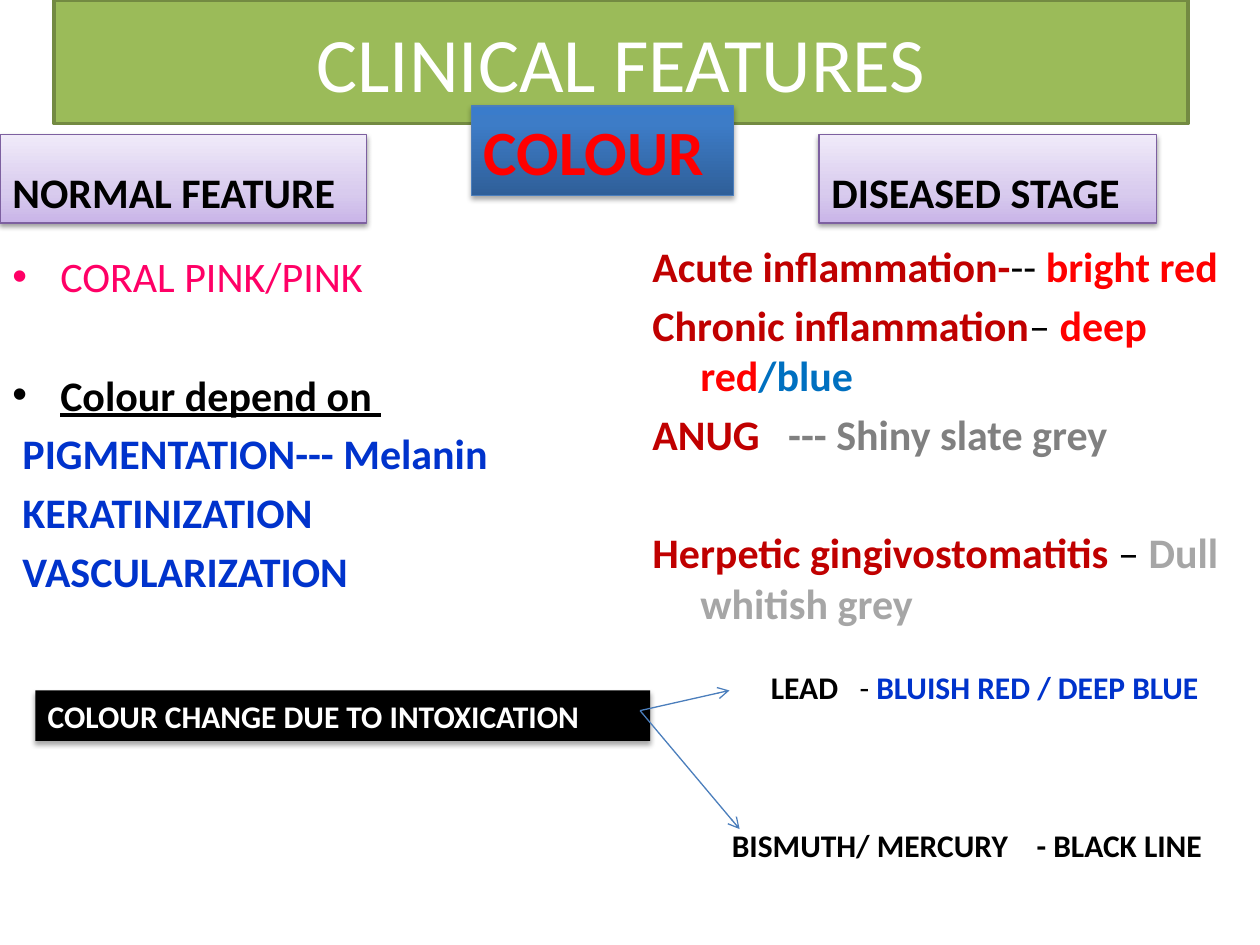
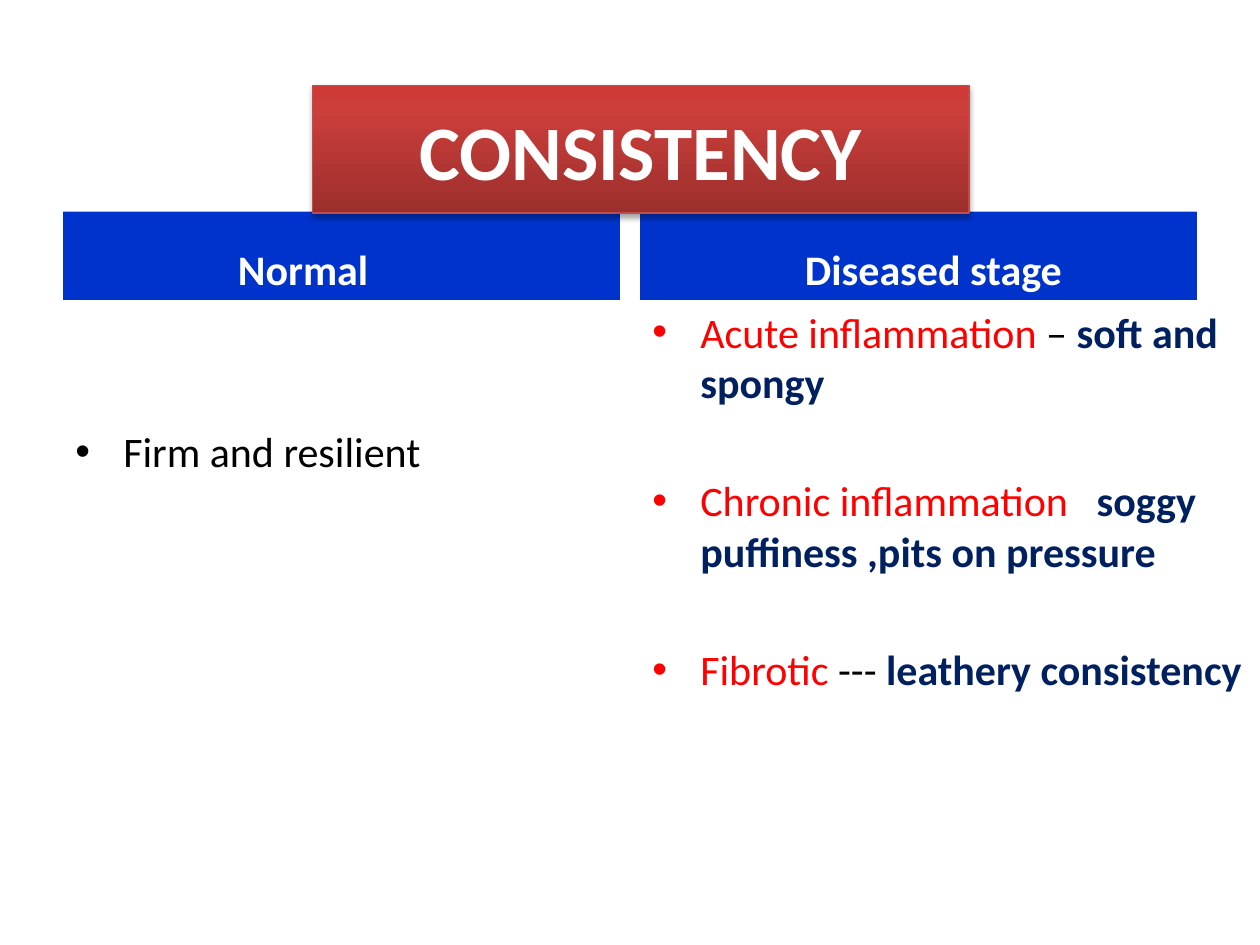
from pptx import Presentation
from pptx.dml.color import RGBColor as Rgb
from pptx.enum.shapes import MSO_CONNECTOR as Link, MSO_SHAPE as Shape
from pptx.enum.text import MSO_ANCHOR as Anchor, PP_ALIGN as Align
from pptx.oxml.ns import qn
from pptx.util import Inches, Pt
from lxml.etree import SubElement

COLOURS = {
    "black": "000000", "white": "FFFFFF", "red": "FF0000", "crimson": "C00000",
    "pink": "FF0066", "royal": "0033CC", "blue": "0070C0", "navy": "002060",
    "slate": "808080", "dull": "A6A6A6", "green": "9BBB59", "olive": "738A42",
    "purple": "7D60A0", "steel": "4B7EBC", "brick": "BF4C48",
}
GRADIENTS = {
    "lilac": [(0, "C9B5E8"), (35, "D8CBEE"), (100, "F0EAF9")],
    "azure": [(0, "2F5F99"), (80, "3D7CC7"), (100, "3A7CCB")],
    "ruby": [(0, "9C2F2D"), (80, "CB3E3A"), (100, "CE3B37")],
}
FONT = "Calibri"
BODY_SIZE = 24
SPACE_WIDTH = 0.226
SPACING = 0.2 * BODY_SIZE
EMPTY_LINE = 1.22 * BODY_SIZE + SPACING
HANG = 0.38
SOFT_SHADOW = {"alpha": 38, "blur": 3.1, "distance": 1.6}
DEEP_SHADOW = {"alpha": 35, "blur": 3.1, "distance": 1.8}


def rgb(name):
    return Rgb.from_string(COLOURS[name])


def run(text, colour="black", bold=True, underline=False):
    return {"text": text, "colour": colour, "bold": bold, "underline": underline}


def wide_space(count):
    return {**run(" "), "spaces": count}


def line(*runs, bullet=False, left=HANG, hang=HANG, after_gap=False):
    return {"runs": runs, "bullet": bullet, "left": left, "hang": hang,
            "after_gap": after_gap}


def plain(*runs, left=0):
    return line(*runs, left=left, hang=0)


def add_run(para, item, size):
    span = para.add_run()
    span.text = item["text"]
    formats = {"name": FONT, "size": Pt(size), "bold": item["bold"],
               "underline": item["underline"]}
    for name, value in formats.items():
        setattr(span.font, name, value)
    span.font.color.rgb = rgb(item["colour"])
    if "spaces" in item:
        extra = (item["spaces"] - 1) * SPACE_WIDTH * size
        span.font._element.set("spc", str(round(extra * 100)))


def write(box, lines, size=BODY_SIZE, anchor=Anchor.TOP, align=Align.LEFT, top=0.05):
    frame = box.text_frame
    formats = {"word_wrap": True, "vertical_anchor": anchor, "margin_top": Inches(top)}
    for name, value in formats.items():
        setattr(frame, name, value)
    for index, item in enumerate(lines):
        para = frame.add_paragraph() if index else frame.paragraphs[0]
        para.alignment = align
        if index:
            para.space_before = Pt(SPACING + EMPTY_LINE * item["after_gap"])
        settings = para._p.get_or_add_pPr()
        settings.set("marL", str(Inches(item["left"])))
        settings.set("indent", str(-Inches(item["hang"])))
        if item["bullet"]:
            SubElement(settings, qn("a:buFont")).set("typeface", "Arial")
            SubElement(settings, qn("a:buChar")).set("char", "•")
        else:
            SubElement(settings, qn("a:buNone"))
        for span in item["runs"]:
            add_run(para, span, size)


def add_text(page, box, lines, **formats):
    write(page.shapes.add_textbox(*map(Inches, box)), lines, **formats)


def fill_gradient(shape, stops):
    shape.fill.gradient()
    shape.fill.gradient_angle = 90
    stop_list = shape._element.spPr.find(qn("a:gradFill")).find(qn("a:gsLst"))
    for old in list(stop_list):
        stop_list.remove(old)
    for position, colour in stops:
        stop = SubElement(stop_list, qn("a:gs"), pos=str(position * 1000))
        SubElement(stop, qn("a:srgbClr"), val=colour)


def add_shadow(shape, alpha, blur, distance):
    effects = shape._element.spPr.find(qn("a:effectLst"))
    outer = SubElement(effects, qn("a:outerShdw"), blurRad=str(Pt(blur)),
                       dist=str(Pt(distance)), dir="5400000", rotWithShape="0")
    colour = SubElement(outer, qn("a:srgbClr"), val=COLOURS["black"])
    SubElement(colour, qn("a:alpha"), val=str(alpha * 1000))


def add_band(page, box, lines, fill, border=None, width=0.75, shadow=None, **formats):
    band = page.shapes.add_shape(Shape.RECTANGLE, *map(Inches, box))
    band.shadow.inherit = False
    if fill in GRADIENTS:
        fill_gradient(band, GRADIENTS[fill])
    else:
        band.fill.solid()
        band.fill.fore_color.rgb = rgb(fill)
    if border:
        band.line.color.rgb = rgb(border)
        band.line.width = Pt(width)
    else:
        band.line.fill.background()
    if shadow:
        add_shadow(band, **shadow)
    write(band, lines, **formats)


def add_title(page, box, text, fill, border, bold=False, **formats):
    add_band(page, box, [plain(run(text, "white", bold))], fill, border,
             size=44, anchor=Anchor.MIDDLE, align=Align.CENTER, **formats)


def add_heading(page, box, text, fill, colour="black", left=0, **formats):
    add_band(page, box, [plain(run(text, colour), left=left)], fill,
             anchor=Anchor.BOTTOM, **formats)


def add_arrow(page, start, end):
    arrow = page.shapes.add_connector(Link.STRAIGHT, *map(Inches, start + end))
    arrow.line.color.rgb = rgb("steel")
    arrow.line.width = Pt(0.75)
    SubElement(arrow.line._get_or_add_ln(), qn("a:tailEnd"), type="arrow")
    SubElement(arrow._element.spPr, qn("a:effectLst"))


def add_intoxication(page, box):
    left, top, width, height = box
    add_band(page, (left, top + 0.23, 4.88, 0.4),
             [plain(run("COLOUR CHANGE DUE TO INTOXICATION", "white"))],
             "black", shadow=DEEP_SHADOW, size=18)
    start = (left + 4.8, top + 0.39)
    for end in ((left + 5.51, top + 0.23), (left + 5.59, top + 1.33)):
        add_arrow(page, start, end)
    metals = [
        ((left + 5.43, top + 1.26, 4.09, 0.4),
         [run("BISMUTH/ MERCURY"), wide_space(4), run("- BLACK LINE")]),
        ((left + 5.74, top, 3.98, 0.4),
         [run("LEAD"), wide_space(3), run("- ", bold=False),
          run("BLUISH RED / DEEP BLUE", "royal")]),
    ]
    for place, runs in metals:
        add_text(page, place, [plain(*runs)], size=18)


def build_colour(page):
    add_title(page, (0.43, 0, 9, 0.98), "CLINICAL FEATURES", "green", "olive", width=2)
    headings = [((0, 1.07, 2.91, 0.7), "NORMAL FEATURE"),
                ((6.5, 1.07, 2.68, 0.7), "DISEASED STAGE")]
    for box, text in headings:
        add_heading(page, box, text, "lilac", border="purple", shadow=SOFT_SHADOW)
    factors = ["PIGMENTATION--- Melanin", "KERATINIZATION", "VASCULARIZATION"]
    add_text(page, (0, 1.94, 4.42, 4.32), [
        line(run("CORAL PINK/PINK", "pink", False), bullet=True),
        line(run("Colour depend on ", underline=True), bullet=True, after_gap=True),
        *[plain(run(factor, "royal"), left=0.08) for factor in factors],
    ])
    add_text(page, (5.08, 1.86, 4.92, 4.32), [
        line(run("Acute inflammation-", "crimson"), run("-- ", bold=False),
             run("bright red", "red")),
        line(run("Chronic inflammation", "crimson"), run("– ", bold=False),
             run("deep red", "red"), run("/blue", "blue")),
        line(run("ANUG", "crimson"), wide_space(3),
             run("--- Shiny slate grey", "slate")),
        line(run("Herpetic gingivostomatitis ", "crimson"), run("– ", bold=False),
             run("Dull whitish grey", "dull"), after_gap=True),
    ])
    add_band(page, (3.74, 0.84, 2.08, 0.71), [plain(run("COLOUR", "red"))],
             "azure", "steel", shadow=DEEP_SHADOW, size=36)
    add_intoxication(page, (0.28, 5.25, 9.72, 1.66))


def build_consistency(page):
    headings = [(0.5, "Normal", 1.29), (5.08, "Diseased stage", 1.21)]
    for left, text, indent in headings:
        add_heading(page, (left, 1.68, 4.42, 0.7), text, "royal", "white", indent)
    add_text(page, (0.5, 2.38, 4.42, 4.32),
             [line(run("Firm and resilient", bold=False), bullet=True)],
             top=0.05 + 2 * EMPTY_LINE / 72)
    add_text(page, (5.08, 2.38, 4.92, 4.32), [
        line(run("Acute inflammation ", "red", False), run("– ", bold=False),
             run("soft and spongy", "navy"), bullet=True),
        line(run("Chronic inflammation", "red", False), wide_space(3),
             run("soggy puffiness ,pits on pressure", "navy"),
             bullet=True, after_gap=True),
        line(run("Fibrotic", "red", False), run(" --- ", bold=False),
             run("leathery consistency", "navy"), bullet=True, after_gap=True),
    ])
    add_title(page, (2.48, 0.68, 5.21, 1.01), "CONSISTENCY", "ruby", "brick",
              bold=True, shadow=DEEP_SHADOW)


def main():
    deck = Presentation()
    deck.slide_width, deck.slide_height = Inches(10), Inches(7.5)
    for build in (build_colour, build_consistency):
        build(deck.slides.add_slide(deck.slide_layouts[6]))
    deck.save("out.pptx")


if __name__ == "__main__":
    main()
